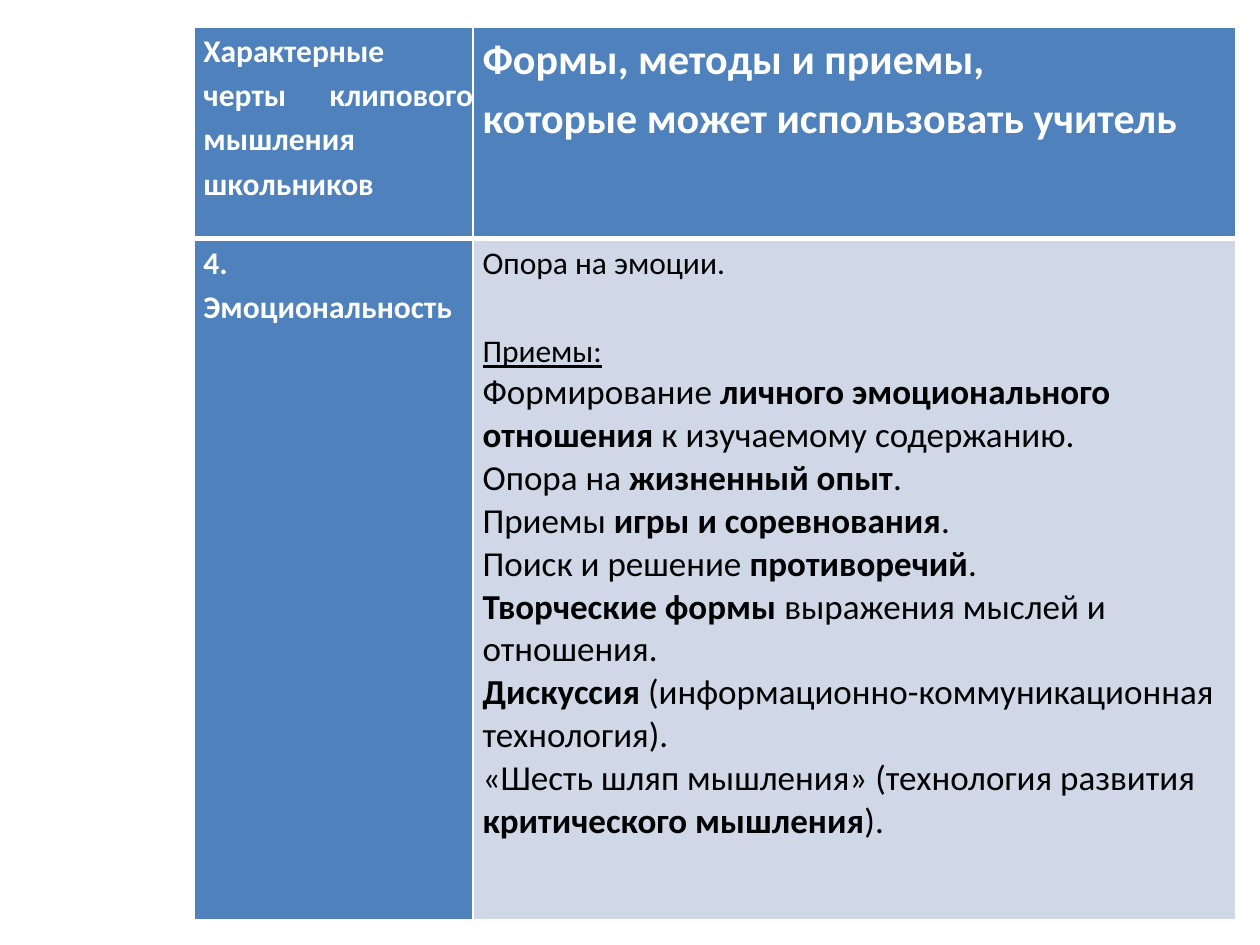
from lxml import etree
from pptx import Presentation
from pptx.dml.color import RGBColor
from pptx.enum.text import PP_ALIGN
from pptx.oxml.ns import qn
from pptx.util import Pt

JUSTIFY, LEFT = PP_ALIGN.JUSTIFY, PP_ALIGN.LEFT
FONT = "Calibri"
COLORS = {"header": "4F81BD", "body": "D0D8E8", "light": "FFFFFF", "dark": "000000"}

TRAIT_HEADER = "Характерные черты клипового мышления школьников"
METHODS_HEADER = ["Формы, методы и приемы,", "которые может использовать учитель"]
TRAIT = "4. Эмоциональность"
# Each technique is a list of (text, bold) spans
TECHNIQUES = [
    [("Формирование ", False), ("личного эмоционального отношения", True),
     (" к изучаемому содержанию.", False)],
    [("Опора на ", False), ("жизненный опыт", True), (".", False)],
    [("Приемы ", False), ("игры и соревнования", True), (".", False)],
    [("Поиск и решение ", False), ("противоречий", True), (".", False)],
    [("Творческие формы ", True), ("выражения мыслей и отношения.", False)],
    [("Дискуссия", True), (" (информационно-коммуникационная технология).", False)],
    [("«Шесть шляп мышления» (технология развития ", False),
     ("критического мышления", True), (").", False)],
]


def add_para(cell, spans, size, color, justified=True, underline=False, before=0):
    frame = cell.text_frame
    para = frame.paragraphs[0]
    if para.runs:
        para = frame.add_paragraph()
    para.alignment = JUSTIFY if justified else LEFT
    para.line_spacing = 1.15 if justified else 1.0
    if before:
        para.space_before = Pt(before)
    for text, bold in spans:
        span = para.add_run()
        span.text = text
        font = span.font
        font.name, font.size = FONT, Pt(size)
        font.bold, font.underline = bold, underline
        font.color.rgb = RGBColor.from_string(COLORS[color])


def add_border(cell, side, width):
    props = cell._tc.get_or_add_tcPr()
    line = etree.SubElement(props, qn(f"a:ln{side}"), w=str(int(Pt(width))))
    fill = etree.SubElement(line, qn("a:solidFill"))
    etree.SubElement(fill, qn("a:srgbClr"), val=COLORS["light"])


def style_cell(cell, fill, right_margin, top_line, bottom_line):
    for side, width in (("L", 1), ("R", 1), ("T", top_line), ("B", bottom_line)):
        add_border(cell, side, width)
    cell.fill.solid()
    cell.fill.fore_color.rgb = RGBColor.from_string(COLORS[fill])
    cell.margin_left, cell.margin_right = Pt(5.4), Pt(right_margin)
    cell.margin_top = cell.margin_bottom = Pt(0)


def add_methods_table(page, left, top, width, height):
    trait_width, header_height = 159.5, 121
    table = page.shapes.add_table(2, 2, Pt(left), Pt(top), Pt(width), Pt(height)).table
    table.columns[0].width = Pt(trait_width)
    table.columns[1].width = Pt(width - trait_width)
    table.rows[0].height = Pt(header_height)
    table.rows[1].height = Pt(height - header_height)

    for row, lines in enumerate([(1, 3), (3, 1)]):
        for column, right_margin in enumerate([0, 5.4]):
            fill = "body" if row and column else "header"
            style_cell(table.cell(row, column), fill, right_margin, *lines)

    add_para(table.cell(0, 0), [(TRAIT_HEADER, True)], 18, "light")
    for text in METHODS_HEADER:
        add_para(table.cell(0, 1), [(text, True)], 24, "light")
    add_para(table.cell(1, 0), [(TRAIT, True)], 18, "light")

    methods = table.cell(1, 1)
    add_para(methods, [("Опора на эмоции.", False)], 18, "dark")
    add_para(methods, [("Приемы:", False)], 18, "dark", underline=True, before=25.4)
    for spans in TECHNIQUES:
        add_para(methods, spans, 20, "dark", justified=False)


def main():
    deck = Presentation()
    deck.slide_width, deck.slide_height = Pt(720), Pt(540)
    page = deck.slides.add_slide(deck.slide_layouts[6])
    add_methods_table(page, 110.9, 15.3, 595.3, 510.4)
    deck.save("out.pptx")


if __name__ == "__main__":
    main()
